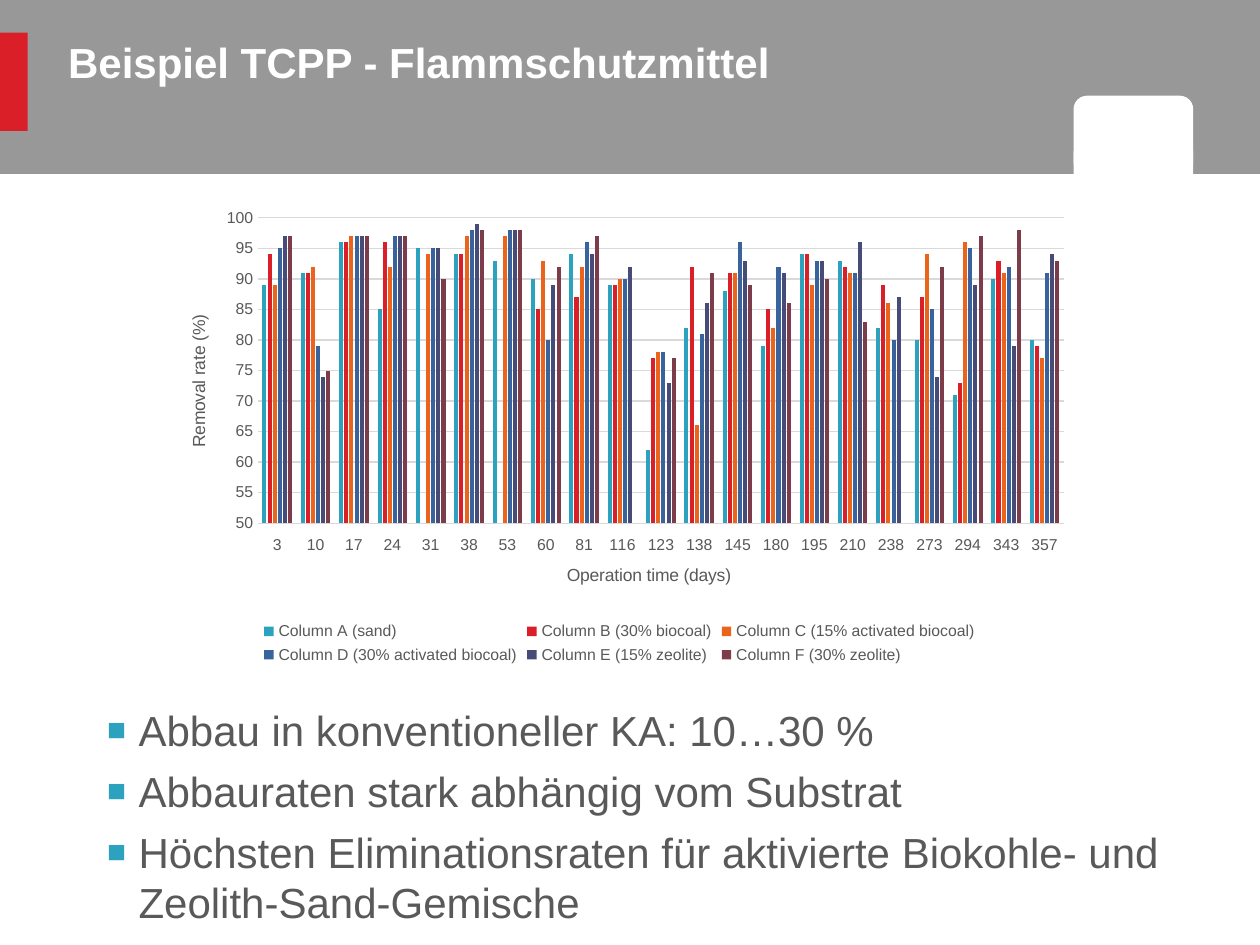
from lxml import etree
from pptx import Presentation, oxml, util as u
from pptx.chart.data import CategoryChartData
from pptx.dml.color import RGBColor
from pptx.enum import chart as charts, shapes, text
from pptx.oxml.ns import qn

COLORS = {
    "white": "FFFFFF", "band": "7F7F7F", "red": "DA1F28", "teal": "2DA2BF",
    "orange": "EB641B", "blue": "39639D", "indigo": "474B78", "plum": "7D3C4A",
    "text": "595959", "grid": "D9D9D9",
}
DAYS = [3, 10, 17, 24, 31, 38, 53, 60, 81, 116, 123, 138, 145, 180, 195,
        210, 238, 273, 294, 343, 357]
COLUMNS = [
    ("Column A (sand)", "teal",
     [89, 91, 96, 85, 95, 94, 93, 90, 94, 89, 62, 82, 88, 79, 94, 93, 82, 80, 71, 90, 80]),
    ("Column B (30% biocoal)", "red",
     [94, 91, 96, 96, -36, 94, 28, 85, 87, 89, 77, 92, 91, 85, 94, 92, 89, 87, 73, 93, 79]),
    ("Column C (15% activated biocoal)", "orange",
     [89, 92, 97, 92, 94, 97, 97, 93, 92, 90, 78, 66, 91, 82, 89, 91, 86, 94, 96, 91, 77]),
    ("Column D (30% activated biocoal)", "blue",
     [95, 79, 97, 97, 95, 98, 98, 80, 96, 90, 78, 81, 96, 92, 93, 91, 80, 85, 95, 92, 91]),
    ("Column E (15% zeolite)", "indigo",
     [97, 74, 97, 97, 95, 99, 98, 89, 94, 92, 73, 86, 93, 91, 93, 96, 87, 74, 89, 79, 94]),
    ("Column F (30% zeolite)", "plum",
     [97, 75, 97, 97, 90, 98, 98, 92, 97, -190, 77, 91, 89, 86, 90, 83, 26, 92, 97, 98, 93]),
]
FINDINGS = [
    "Abbau in konventioneller KA: 10…30 %",
    "Abbauraten stark abhängig vom Substrat",
    "Höchsten Eliminationsraten für aktivierte Biokohle- und Zeolith-Sand-Gemische",
]


def rgb(name):
    """Return the palette colour of that name."""
    return RGBColor.from_string(COLORS[name])


def style_font(font, size, color, bold=False):
    """Set typeface, size, colour and weight of a font."""
    font.name = "Arial"
    font.size = u.Pt(size)
    font.bold = bold
    font.color.rgb = rgb(color)


def add_text(para, words, size=24, color="text", bold=False):
    """Add words to a paragraph in the given format."""
    span = para.add_run()
    span.text = words
    style_font(span.font, size, color, bold)


def add_bullet(para):
    """Give a paragraph a square bullet with a hanging indent."""
    props = para._p.get_or_add_pPr()
    props.set("marL", str(u.Inches(0.25)))
    props.set("indent", str(u.Inches(-0.25)))
    color = etree.SubElement(props, qn("a:buClr"))
    etree.SubElement(color, qn("a:srgbClr"), val=COLORS["teal"])
    etree.SubElement(props, qn("a:buSzPct"), val="75000")
    etree.SubElement(props, qn("a:buFont"), typeface="Arial")
    etree.SubElement(props, qn("a:buChar"), char="■")


def set_layout(parent, index, inner=False, **fractions):
    """Fix the place of a chart part as fractions of the chart."""
    for old in parent.findall(qn("c:layout")):
        parent.remove(old)
    layout = oxml.parse_xml(
        '<c:layout xmlns:c="http://schemas.openxmlformats.org/drawingml/2006/chart"/>')
    manual = etree.SubElement(layout, qn("c:manualLayout"))
    if inner:
        etree.SubElement(manual, qn("c:layoutTarget"), val="inner")
    for mode in ("xMode", "yMode"):
        etree.SubElement(manual, qn(f"c:{mode}"), val="edge")
    for key, value in fractions.items():
        etree.SubElement(manual, qn(f"c:{key}"), val=str(value))
    parent.insert(index, layout)


class Slide:
    """Hold the deck style and the current page."""

    def __init__(self, deck):
        """Add a title and content page to the deck."""
        self.page = deck.slides.add_slide(deck.slide_layouts[1])

    def block(self, kind, place, color, alpha=None, radius=None):
        """Draw a filled shape without outline."""
        shape = self.page.shapes.add_shape(kind, *map(u.Inches, place))
        shape.shadow.inherit = False
        shape.fill.solid()
        shape.fill.fore_color.rgb = rgb(color)
        shape.line.fill.background()
        if alpha:
            fill = shape._element.spPr.find(f".//{qn('a:srgbClr')}")
            etree.SubElement(fill, qn("a:alpha"), val=str(alpha * 1000))
        if radius:
            shape.adjustments[0] = radius

    def place(self, box, place):
        """Move a placeholder to its place in front and return its text frame."""
        box.left, box.top, box.width, box.height = map(u.Inches, place)
        self.page.shapes._spTree.append(box._element)
        frame = box.text_frame
        frame.word_wrap = True
        frame.auto_size = text.MSO_AUTO_SIZE.NONE
        frame.vertical_anchor = text.MSO_ANCHOR.TOP
        return frame

    def title(self, words, place):
        """Fill the title placeholder."""
        frame = self.place(self.page.shapes.title, place)
        frame.margin_left = frame.margin_right = frame.margin_top = frame.margin_bottom = 0
        para = frame.paragraphs[0]
        para.alignment = text.PP_ALIGN.LEFT
        add_text(para, words, color="white", bold=True)

    def bullets(self, items, place):
        """Fill the body placeholder with a bulleted list."""
        frame = self.place(self.page.placeholders[1], place)
        for index, item in enumerate(items):
            para = frame.add_paragraph() if index else frame.paragraphs[0]
            add_bullet(para)
            para.space_before = u.Pt(6 if index else 0)
            add_text(para, item)

    def axis(self, axis, title, x, y):
        """Format an axis and place its title."""
        axis.major_tick_mark = axis.minor_tick_mark = charts.XL_TICK_MARK.NONE
        style_font(axis.tick_labels.font, 9, "text")
        add_text(axis.axis_title.text_frame.paragraphs[0], title, size=10)
        set_layout(axis.axis_title._element, 1, x=x, y=y)

    def column_chart(self, place):
        """Draw the removal rates as clustered columns."""
        data = CategoryChartData(number_format="0")
        data.categories = [str(day) for day in DAYS]
        for name, _, values in COLUMNS:
            data.add_series(name, values)
        chart = self.page.shapes.add_chart(
            charts.XL_CHART_TYPE.COLUMN_CLUSTERED, *map(u.Inches, place), data).chart
        style_font(chart.font, 10, "text")
        chart.has_title = False
        chart.has_legend = True
        chart.legend.position = charts.XL_LEGEND_POSITION.BOTTOM
        chart.legend.include_in_layout = False
        style_font(chart.legend.font, 9, "text")

        plot = chart.plots[0]
        plot.vary_by_categories = False
        plot.gap_width, plot.overlap = 219, -27
        for series, (_, color, _) in zip(plot.series, COLUMNS):
            series.invert_if_negative = False
            series.format.fill.solid()
            series.format.fill.fore_color.rgb = rgb(color)

        days, rate = chart.category_axis, chart.value_axis
        self.axis(days, "Operation time (days)", x=0.44, y=0.77)
        self.axis(rate, "Removal rate (%)", x=0.03, y=0.24)
        days.tick_label_position = charts.XL_TICK_LABEL_POSITION.LOW
        rate.minimum_scale, rate.maximum_scale, rate.major_unit = 50, 100, 5
        rate.tick_labels.number_format = "0"
        rate.tick_labels.number_format_is_linked = False
        rate.format.line.fill.background()
        for line in (days.format.line, rate.major_gridlines.format.line):
            line.color.rgb = rgb("grid")
            line.width = u.Pt(0.75)
        set_layout(chart._chartSpace.chart.plotArea, 0, inner=True,
                   x=0.11, y=0.04, w=0.87, h=0.65)


def main():
    """Build and save the deck."""
    deck = Presentation()
    deck.slide_width, deck.slide_height = u.Inches(10), u.Inches(7.5)
    slide = Slide(deck)
    kinds = shapes.MSO_SHAPE
    slide.block(kinds.RECTANGLE, (0, 0, 10, 1.38), "band", alpha=80)
    slide.block(kinds.RECTANGLE, (0, 0.26, 0.22, 0.78), "red")
    slide.block(kinds.ROUNDED_RECTANGLE, (8.52, 0.76, 0.95, 0.63), "white", radius=0.17)
    slide.block(kinds.RECTANGLE, (8.52, 1.2, 0.95, 0.19), "white")
    slide.title("Beispiel TCPP - Flammschutzmittel", (0.54, 0.29, 7.48, 0.75))
    slide.column_chart((1.24, 1.58, 7.35, 3.73))
    slide.bullets(FINDINGS, (0.75, 5.54, 9.09, 1.73))
    deck.save("out.pptx")


if __name__ == "__main__":
    main()
